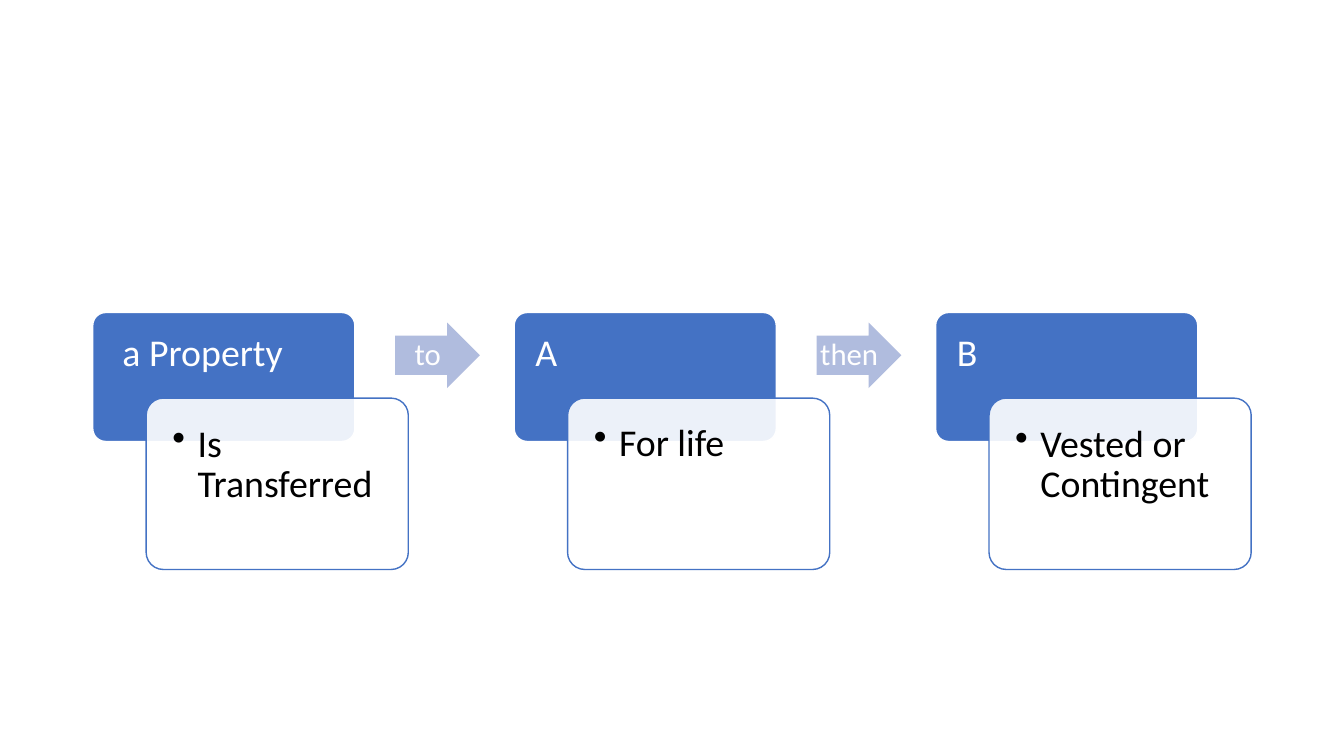
from dataclasses import dataclass

from lxml import etree
from pptx import Presentation
from pptx.dml.color import RGBColor
from pptx.enum.shapes import MSO_SHAPE
from pptx.enum.text import MSO_ANCHOR, PP_ALIGN
from pptx.oxml.ns import qn
from pptx.util import Inches, Pt

ROUNDED = MSO_SHAPE.ROUNDED_RECTANGLE
ARROW = MSO_SHAPE.RIGHT_ARROW
TOP, MIDDLE = MSO_ANCHOR.TOP, MSO_ANCHOR.MIDDLE
LEFT, CENTER = PP_ALIGN.LEFT, PP_ALIGN.CENTER
BLANK_LAYOUT = 6

SLIDE_WIDTH, SLIDE_HEIGHT = 13.33, 7.5
GRID_LEFT, GRID_TOP, COLUMN = 0.92, 3.1, 4.18
CARD_WIDTH, HEADER_HEIGHT, DETAIL_HEIGHT = 2.6, 1.28, 1.7
DETAIL_SHIFT, HEADING_HEIGHT = 0.53, 0.85
ARROW_SHIFT, ARROW_DROP, ARROW_WIDTH, ARROW_HEIGHT = 3.0, 0.1, 0.84, 0.65
PADDING, DETAIL_INSET, BULLET_INDENT = 0.21, 0.05, 0.25

STEPS = [
    (" a Property", "Is Transferred", "to"),
    ("A", "For life", "then"),
    ("B", "Vested or Contingent", None),
]


@dataclass(frozen=True)
class Theme:
    font: str = "Calibri"
    card_size: int = 27
    arrow_size: int = 22
    blue: RGBColor = RGBColor(0x44, 0x72, 0xC4)
    pale_blue: RGBColor = RGBColor(0xB0, 0xBC, 0xDE)
    white: RGBColor = RGBColor(0xFF, 0xFF, 0xFF)
    black: RGBColor = RGBColor(0, 0, 0)


THEME = Theme()


def add_panel(page, kind, area, adjustments, fill, line=None):
    panel = page.shapes.add_shape(kind, *map(Inches, area))
    panel.shadow.inherit = False
    for index, value in enumerate(adjustments):
        panel.adjustments[index] = value
    panel.fill.solid()
    panel.fill.fore_color.rgb = fill
    if line is None:
        panel.line.fill.background()
    else:
        panel.line.color.rgb = line
        panel.line.width = Pt(1)
    return panel


def set_opacity(panel, percent):
    color = panel.fill._xPr.find(qn("a:solidFill"))[0]
    etree.SubElement(color, qn("a:alpha"), val=str(percent * 1000))


def add_label(page, area, text, size, color, padding, anchor=TOP, align=LEFT):
    box = page.shapes.add_textbox(*map(Inches, area))
    frame = box.text_frame
    frame.word_wrap = True
    frame.vertical_anchor = anchor
    (frame.margin_left, frame.margin_top,
     frame.margin_right, frame.margin_bottom) = map(Inches, padding)
    para = frame.paragraphs[0]
    para.text = text
    para.alignment = align
    para.line_spacing = 0.9
    para.font.name = THEME.font
    para.font.size = Pt(size)
    para.font.color.rgb = color
    return para


def add_bullet(para):
    properties = para._p.get_or_add_pPr()
    properties.set("marL", str(Inches(BULLET_INDENT)))
    properties.set("indent", str(-Inches(BULLET_INDENT)))
    bullet = etree.Element(qn("a:buChar"), char="•")
    properties.find(qn("a:defRPr")).addprevious(bullet)


def add_header(page, left, text):
    add_panel(page, ROUNDED, (left, GRID_TOP, CARD_WIDTH, HEADER_HEIGHT),
              [0.1], THEME.blue, THEME.white)
    add_label(page, (left, GRID_TOP, CARD_WIDTH, HEADING_HEIGHT), text,
              THEME.card_size, THEME.white,
              (PADDING, PADDING, PADDING, PADDING / 2))


def add_detail(page, left, text):
    top = GRID_TOP + HEADING_HEIGHT
    panel = add_panel(page, ROUNDED, (left, top, CARD_WIDTH, DETAIL_HEIGHT),
                      [0.1], THEME.white, THEME.blue)
    set_opacity(panel, 90)
    area = (left + DETAIL_INSET, top + DETAIL_INSET,
            CARD_WIDTH - 2 * DETAIL_INSET, DETAIL_HEIGHT - 2 * DETAIL_INSET)
    para = add_label(page, area, text, THEME.card_size, THEME.black,
                     [PADDING] * 4)
    add_bullet(para)


def add_arrow(page, left, text):
    top = GRID_TOP + ARROW_DROP
    add_panel(page, ARROW, (left, top, ARROW_WIDTH, ARROW_HEIGHT),
              [0.6, 0.5], THEME.pale_blue)
    area = (left, top + 0.2 * ARROW_HEIGHT,
            ARROW_WIDTH - 0.3 * ARROW_HEIGHT, 0.6 * ARROW_HEIGHT)
    add_label(page, area, text, THEME.arrow_size, THEME.white,
              [0] * 4, MIDDLE, CENTER)


def main():
    deck = Presentation()
    deck.slide_width = Inches(SLIDE_WIDTH)
    deck.slide_height = Inches(SLIDE_HEIGHT)
    page = deck.slides.add_slide(deck.slide_layouts[BLANK_LAYOUT])
    for index, (heading, detail, link) in enumerate(STEPS):
        left = GRID_LEFT + index * COLUMN
        add_header(page, left, heading)
        add_detail(page, left + DETAIL_SHIFT, detail)
        if link:
            add_arrow(page, left + ARROW_SHIFT, link)
    deck.save("out.pptx")


if __name__ == "__main__":
    main()
